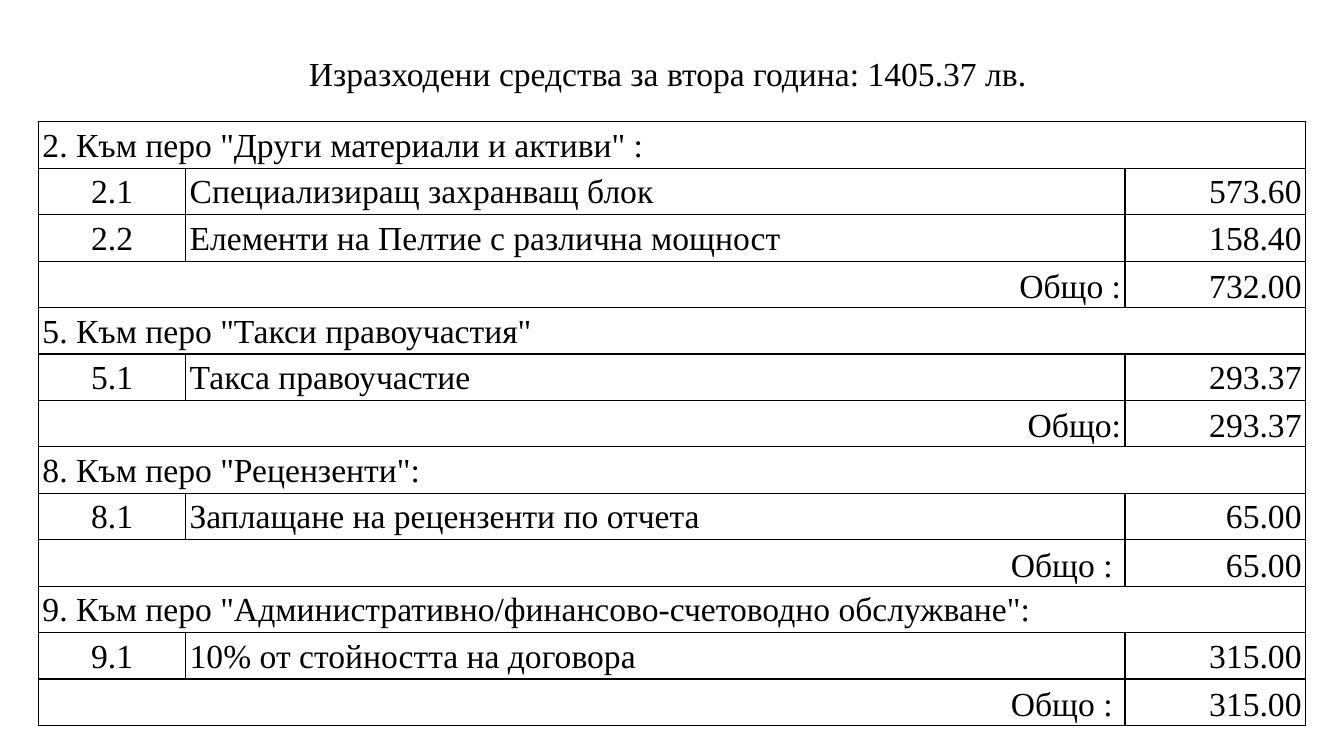
from dataclasses import dataclass

from lxml.etree import SubElement
from pptx import Presentation
from pptx.dml.color import RGBColor
from pptx.enum.text import MSO_ANCHOR, PP_ALIGN
from pptx.oxml.ns import qn
from pptx.util import Cm, Pt

BLACK = RGBColor(0x00, 0x00, 0x00)
FONT = "Times New Roman"
TEXT_SIZE = Pt(24)
ROW_HEIGHT = Cm(1.17)
COLUMN_WIDTHS = (Cm(3.71), Cm(23.67), Cm(4.55))


@dataclass(frozen=True)
class Expense:
    number: str
    purpose: str
    amount: str


@dataclass(frozen=True)
class BudgetItem:
    heading: str
    expenses: tuple[Expense, ...]
    total_label: str
    total: str


BUDGET_ITEMS = (
    BudgetItem('2. Към перо "Други материали и активи" :',
               (Expense("2.1", "Специализиращ захранващ блок", "573.60"),
                Expense("2.2", "Елементи на Пелтие с различна мощност", "158.40")),
               "Общо :", "732.00"),
    BudgetItem('5. Към перо "Такси правоучастия"',
               (Expense("5.1", "Такса правоучастие", "293.37"),),
               "Общо:", "293.37"),
    BudgetItem('8. Към перо "Рецензенти":',
               (Expense("8.1", "Заплащане на рецензенти по отчета", "65.00"),),
               "Общо : ", "65.00"),
    BudgetItem('9. Към перо "Административно/финансово-счетоводно обслужване":',
               (Expense("9.1", "10% от стойността на договора", "315.00"),),
               "Общо : ", "315.00"),
)


def write(text_frame, text: str, align: PP_ALIGN) -> None:
    text_frame.text = text
    paragraph = text_frame.paragraphs[0]
    paragraph.alignment = align
    font = paragraph.runs[0].font
    font.name, font.size = FONT, TEXT_SIZE
    font.color.rgb = BLACK


def format_cell(cell) -> None:
    """Thin black borders, no fill and narrow margins."""
    properties = cell._tc.get_or_add_tcPr()
    for side in ("a:lnL", "a:lnR", "a:lnT", "a:lnB"):
        border = SubElement(properties, qn(side), w=str(Pt(1)))
        SubElement(SubElement(border, qn("a:solidFill")), qn("a:srgbClr"), val=str(BLACK))
    cell.fill.background()
    cell.margin_left = cell.margin_right = Cm(0.1)
    cell.margin_top = cell.margin_bottom = 0


def fill_cell(cell, text: str, align: PP_ALIGN, anchor: MSO_ANCHOR = MSO_ANCHOR.TOP) -> None:
    write(cell.text_frame, text, align)
    cell.text_frame.paragraphs[0].line_spacing = 1.15
    cell.vertical_anchor = anchor


def draw_item(table, row: int, item: BudgetItem) -> int:
    """Write one budget item and return the row that follows it."""
    table.cell(row, 0).merge(table.cell(row, 2))
    fill_cell(table.cell(row, 0), item.heading, PP_ALIGN.LEFT)
    for row, expense in enumerate(item.expenses, start=row + 1):
        fill_cell(table.cell(row, 0), expense.number, PP_ALIGN.CENTER)
        fill_cell(table.cell(row, 1), expense.purpose, PP_ALIGN.LEFT)
        fill_cell(table.cell(row, 2), expense.amount, PP_ALIGN.RIGHT)
    row += 1
    table.cell(row, 0).merge(table.cell(row, 1))
    fill_cell(table.cell(row, 0), item.total_label, PP_ALIGN.RIGHT, MSO_ANCHOR.MIDDLE)
    fill_cell(table.cell(row, 2), item.total, PP_ALIGN.RIGHT, MSO_ANCHOR.MIDDLE)
    return row + 1


def main() -> None:
    presentation = Presentation()
    presentation.slide_width, presentation.slide_height = Cm(33.87), Cm(19.05)
    slide = presentation.slides.add_slide(presentation.slide_layouts[6])

    # Heading with the yearly total
    heading = slide.shapes.add_textbox(Cm(4.55), Cm(1.22), Cm(24.77), Cm(1.27))
    heading.text_frame.word_wrap = True
    write(heading.text_frame, "Изразходени средства за втора година: 1405.37 лв. ", PP_ALIGN.CENTER)

    # Expense table
    row_count = sum(len(item.expenses) + 2 for item in BUDGET_ITEMS)
    expenses = slide.shapes.add_table(row_count, len(COLUMN_WIDTHS), Cm(0.97), Cm(3.07),
                                      sum(COLUMN_WIDTHS), ROW_HEIGHT * row_count).table
    expenses.first_row = expenses.horz_banding = False
    for column, width in zip(expenses.columns, COLUMN_WIDTHS):
        column.width = width
    for table_row in expenses.rows:
        table_row.height = ROW_HEIGHT
    for cell in expenses.iter_cells():
        format_cell(cell)

    # Budget items, one below the other
    next_row = 0
    for item in BUDGET_ITEMS:
        next_row = draw_item(expenses, next_row, item)

    presentation.save("out.pptx")


if __name__ == "__main__":
    main()
